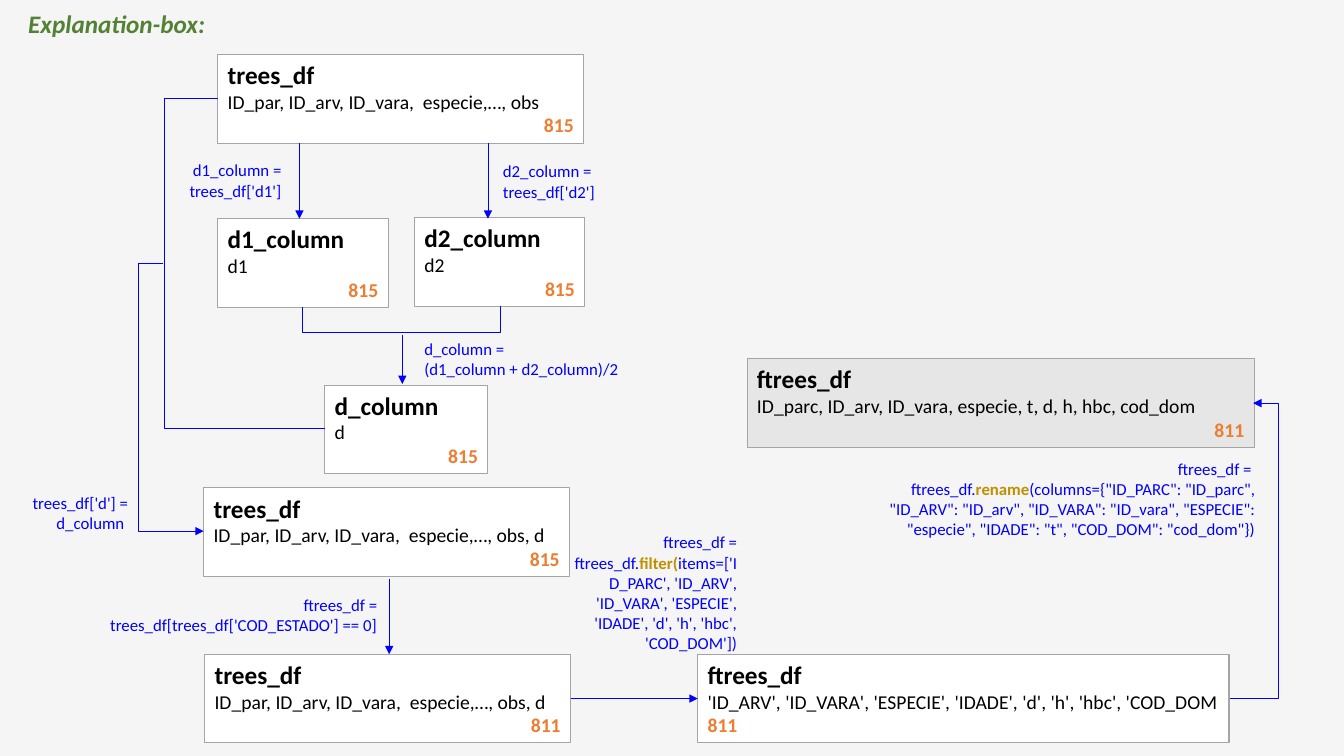
from dataclasses import dataclass

from lxml import etree
from pptx import Presentation
from pptx.dml.color import RGBColor
from pptx.enum.shapes import MSO_CONNECTOR, MSO_SHAPE
from pptx.enum.text import MSO_ANCHOR, MSO_AUTO_SIZE, PP_ALIGN
from pptx.oxml.ns import qn
from pptx.util import Emu, Pt

PX = 9144
PAGE_WIDTH, PAGE_HEIGHT = 1333, 750
CARD_HEIGHT = 88
FONT = "Calibri"

WHITE = RGBColor(0xFF, 0xFF, 0xFF)
BLACK = RGBColor(0x00, 0x00, 0x00)
BLUE = RGBColor(0x00, 0x00, 0xFF)
GRAY = RGBColor(0xA5, 0xA5, 0xA5)
LIGHT_GRAY = RGBColor(0xE7, 0xE6, 0xE6)
ORANGE = RGBColor(0xED, 0x7D, 0x31)
GOLD = RGBColor(0xBF, 0x90, 0x00)
GREEN = RGBColor(0x54, 0x82, 0x35)

LEFT, RIGHT = PP_ALIGN.LEFT, PP_ALIGN.RIGHT
TOP = MSO_ANCHOR.TOP
FIT_SHAPE = MSO_AUTO_SIZE.SHAPE_TO_FIT_TEXT
RECTANGLE = MSO_SHAPE.RECTANGLE
STRAIGHT, ELBOW = MSO_CONNECTOR.STRAIGHT, MSO_CONNECTOR.ELBOW


@dataclass(frozen=True)
class Card:
    left: int
    top: int
    width: int
    name: str
    columns: str
    count: str
    fill: RGBColor = WHITE
    count_align: PP_ALIGN = RIGHT


@dataclass(frozen=True)
class Method:
    text: str


@dataclass(frozen=True)
class Label:
    left: int
    top: int
    width: int
    height: int
    lines: tuple
    align: PP_ALIGN = RIGHT
    wrap: bool = True


@dataclass(frozen=True)
class Route:
    start: tuple[float, float]
    end: tuple[float, float]
    bend: int | None = None
    vertical: bool = False
    arrow: bool = True


CARDS = (
    Card(216, 54, 363, "trees_df", "ID_par, ID_arv, ID_vara,  especie,…, obs", "815"),
    Card(216, 217, 169, "d1_column", "d1", "815"),
    Card(411, 216, 169, "d2_column", "d2", "815"),
    Card(322, 382, 162, "d_column", "d", "815"),
    Card(202, 484, 363, "trees_df", "ID_par, ID_arv, ID_vara,  especie,…, obs, d", "815"),
    Card(203, 649, 363, "trees_df", "ID_par, ID_arv, ID_vara,  especie,…, obs, d", "811"),
    Card(692, 649, 527, "ftrees_df",
         "'ID_ARV', 'ID_VARA', 'ESPECIE', 'IDADE', 'd', 'h', 'hbc', 'COD_DOM",
         "811", count_align=LEFT),
    Card(741, 356, 503, "ftrees_df",
         "ID_parc, ID_arv, ID_vara, especie, t, d, h, hbc, cod_dom", "811", LIGHT_GRAY),
)

LABELS = (
    Label(145, 154, 144, 50, (("d1_column = trees_df['d1']",),)),
    Label(489, 155, 144, 50, (("d2_column = trees_df['d2']",),), LEFT),
    Label(411, 331, 215, 50, (("d_column =",), ("(d1_column + d2_column)/2",)), LEFT, False),
    Label(-7, 484, 144, 50, (("trees_df['d'] = d_column ",),)),
    Label(73, 585, 311, 50, (("ftrees_df = trees_df[trees_df['COD_ESTADO'] == 0]",),)),
    Label(560, 523, 181, 131, ((
        "ftrees_df = ftrees_df.", Method("filter("),
        "items=['ID_PARC', 'ID_ARV', 'ID_VARA', 'ESPECIE', "
        "'IDADE', 'd', 'h', 'hbc', 'COD_DOM'])"),)),
    Label(860, 450, 395, 91, (("ftrees_df = ",), (
        "ftrees_df.", Method("rename"),
        '(columns={"ID_PARC": "ID_parc", "ID_ARV": "ID_arv", "ID_VARA": "ID_vara", '
        '"ESPECIE": "especie", "IDADE": "t", "COD_DOM": "cod_dom"})'))),
)

ROUTES = (
    Route((297, 142), (297, 217)),
    Route((484, 142), (484, 217)),
    Route((300, 305), (496, 304), bend=330, vertical=True, arrow=False),
    Route((399, 332), (399, 381)),
    Route((216, 98), (322, 425), bend=163, arrow=False),
    Route((162, 261), (202, 527), bend=137),
    Route((386, 574), (386, 649)),
    Route((566, 693), (692, 693)),
    Route((1220, 693), (1243, 400), bend=1268),
)


def px(value: float) -> Emu:
    return Emu(round(value * PX))


def add_span(para, text: str, *, size: int, color: RGBColor,
             bold: bool = False, italic: bool = False) -> None:
    span = para.add_run()
    span.text = text
    span.font.name = FONT
    span.font.size = Pt(size)
    span.font.color.rgb = color
    span.font.bold = bold
    span.font.italic = italic


def set_frame(frame, wrap: bool = True) -> None:
    frame.word_wrap = wrap
    frame.auto_size = FIT_SHAPE
    frame.vertical_anchor = TOP


def add_para(frame, index: int, align: PP_ALIGN):
    para = frame.add_paragraph() if index else frame.paragraphs[0]
    para.alignment = align
    return para


def add_rectangle(page, left: int, top: int, width: int, height: int, fill: RGBColor):
    box = page.shapes.add_shape(RECTANGLE, px(left), px(top), px(width), px(height))
    box.shadow.inherit = False
    box.fill.solid()
    box.fill.fore_color.rgb = fill
    return box


def add_backdrop(page) -> None:
    box = add_rectangle(page, 0, 0, PAGE_WIDTH, PAGE_HEIGHT, LIGHT_GRAY)
    box.line.fill.background()
    color = box.element.spPr.find(qn("a:solidFill")).find(qn("a:srgbClr"))
    etree.SubElement(color, qn("a:alpha")).set("val", "38000")
    page.shapes.title.element.addprevious(box.element)


def add_title(page, text: str) -> None:
    title = page.shapes.title
    title.left, title.top, title.width, title.height = map(px, (18, 3, 197, 40))
    set_frame(title.text_frame, wrap=False)
    para = add_para(title.text_frame, 0, LEFT)
    add_span(para, text, size=18, color=GREEN, bold=True, italic=True)


def add_card(page, card: Card) -> None:
    box = add_rectangle(page, card.left, card.top, card.width, CARD_HEIGHT, card.fill)
    box.line.color.rgb = GRAY
    box.line.width = Pt(0.75)
    frame = box.text_frame
    set_frame(frame)
    add_span(add_para(frame, 0, LEFT), card.name, size=18, color=BLACK, bold=True)
    add_span(add_para(frame, 1, LEFT), card.columns, size=14, color=BLACK)
    add_span(add_para(frame, 2, card.count_align), card.count, size=14, color=ORANGE, bold=True)


def add_label(page, label: Label) -> None:
    box = page.shapes.add_textbox(
        px(label.left), px(label.top), px(label.width), px(label.height))
    set_frame(box.text_frame, label.wrap)
    for index, line in enumerate(label.lines):
        para = add_para(box.text_frame, index, label.align)
        for part in line:
            if isinstance(part, Method):
                add_span(para, part.text, size=12, color=GOLD, bold=True)
            else:
                add_span(para, part, size=12, color=BLUE)


def add_route(page, route: Route) -> None:
    (x1, y1), (x2, y2), bend = route.start, route.end, route.bend
    if route.vertical:
        middle_x, middle_y = (x1 + x2) / 2, (y1 + y2) / 2
        bend += middle_x - middle_y
        x1, y1, x2, y2 = (middle_x + y1 - middle_y, middle_y + middle_x - x1,
                          middle_x + y2 - middle_y, middle_y + middle_x - x2)
    kind = STRAIGHT if bend is None else ELBOW
    line = page.shapes.add_connector(kind, px(x1), px(y1), px(x2), px(y2))
    line.line.color.rgb = BLUE
    line.line.width = Pt(0.5)
    properties = line.element.spPr
    if route.vertical:
        properties.find(qn("a:xfrm")).set("rot", "5400000")
    if bend is not None:
        guides = properties.find(qn("a:prstGeom")).find(qn("a:avLst"))
        guide = etree.SubElement(guides, qn("a:gd"))
        guide.set("name", "adj1")
        guide.set("fmla", f"val {round((bend - x1) / (x2 - x1) * 100000)}")
    if route.arrow:
        etree.SubElement(properties.find(qn("a:ln")), qn("a:tailEnd")).set("type", "triangle")
    etree.SubElement(properties, qn("a:effectLst"))


def main() -> None:
    deck = Presentation()
    deck.slide_width, deck.slide_height = px(PAGE_WIDTH), px(PAGE_HEIGHT)
    page = deck.slides.add_slide(deck.slide_layouts[5])
    add_backdrop(page)
    add_title(page, "Explanation-box:")
    for card in CARDS:
        add_card(page, card)
    for route in ROUTES:
        add_route(page, route)
    for label in LABELS:
        add_label(page, label)
    deck.save("out.pptx")


if __name__ == "__main__":
    main()
